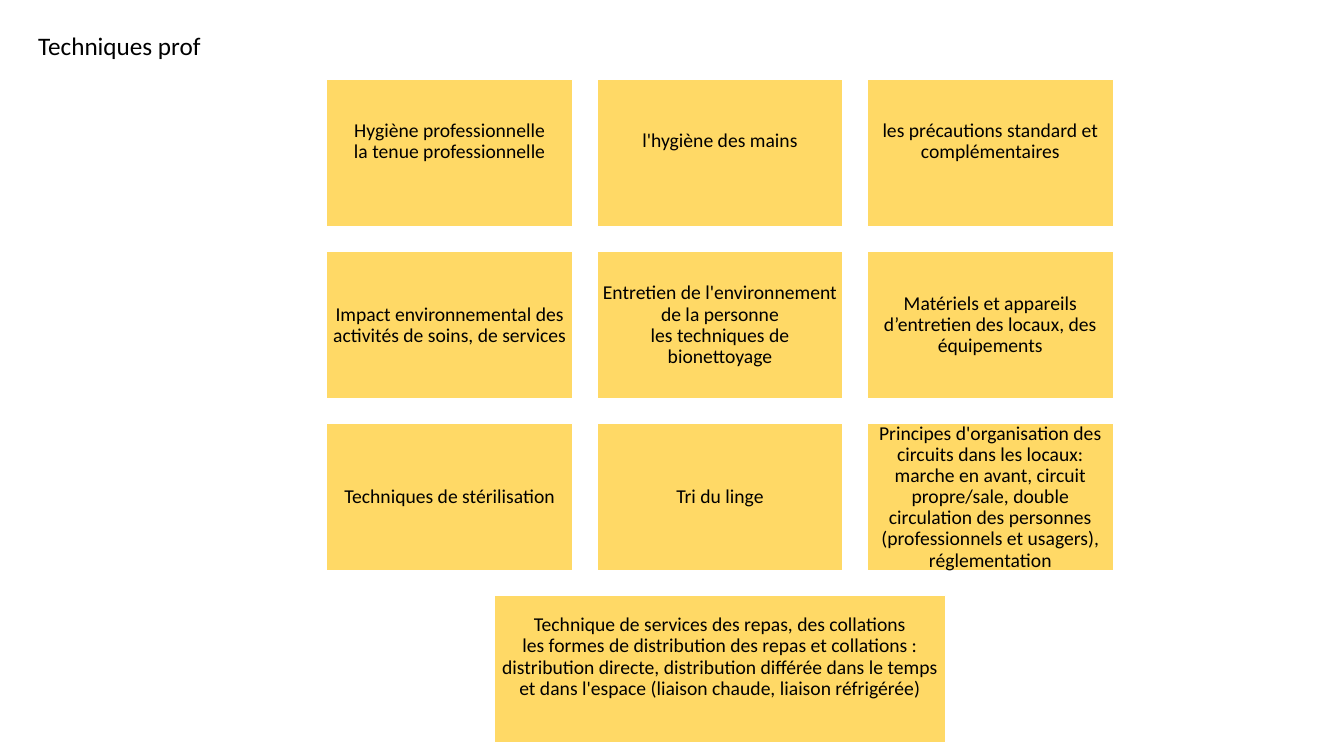
"""Build the slide that lists the professional techniques."""
from pptx import Presentation
from pptx.dml.color import RGBColor
from pptx.enum.shapes import MSO_SHAPE
from pptx.enum.text import MSO_ANCHOR, MSO_AUTO_SIZE, PP_ALIGN
from pptx.util import Pt

TITLE = "Techniques prof"
CARDS = [
    "Hygiène professionnelle\nla tenue professionnelle",
    "l'hygiène des mains",
    "les précautions standard et complémentaires",
    "Impact environnemental des activités de soins, de services",
    "Entretien de l'environnement de la personne\nles techniques de bionettoyage",
    "Matériels et appareils d’entretien des locaux, des équipements",
    "Techniques de stérilisation",
    "Tri du linge",
    "Principes d'organisation des circuits dans les locaux: marche en avant, "
    "circuit propre/sale, double circulation des personnes "
    "(professionnels et usagers), réglementation",
    "Technique de services des repas, des collations\n"
    "les formes de distribution des repas et collations : distribution directe, "
    "distribution différée dans le temps et dans l'espace "
    "(liaison chaude, liaison réfrigérée)",
]
RAISED = {0, 1, 2, 9}

YELLOW = RGBColor(0xFF, 0xD9, 0x66)
WHITE = RGBColor(0xFF, 0xFF, 0xFF)
BLACK = RGBColor(0, 0, 0)
RECT = MSO_SHAPE.RECTANGLE
TOP, MIDDLE = MSO_ANCHOR.TOP, MSO_ANCHOR.MIDDLE
LEFT, CENTER = PP_ALIGN.LEFT, PP_ALIGN.CENTER
FIXED = MSO_AUTO_SIZE.NONE

COLS = 3
X0, Y0 = 233.4, 56.9
WIDTH, HEIGHT, GAP = 175.6, 105.3, 17.5
WIDE = 322.6
INSET, LIFT = 3.6, 17


def write(shape, text, size=14, align=CENTER, anchor=MIDDLE, space=0.9,
          side=INSET, lift=0):
    """Fill a shape with formatted text, one paragraph per line."""
    frame = shape.text_frame
    frame.word_wrap = True
    frame.auto_size = FIXED
    frame.vertical_anchor = anchor
    frame.margin_left = frame.margin_right = Pt(side)
    frame.margin_top = Pt(INSET)
    frame.margin_bottom = Pt(INSET + lift)
    frame.text = text
    for para in frame.paragraphs:
        para.alignment = align
        para.line_spacing = space
        para.space_before = para.space_after = Pt(0)
        for run in para.runs:
            font = run.font
            font.name, font.size = "Calibri", Pt(size)
            font.color.rgb = BLACK


def card(slide, num, text):
    """Draw one card in its grid place; the last row is one centred card."""
    row, col = divmod(num, COLS)
    left = X0 + col * (WIDTH + GAP)
    width = WIDTH
    if num == len(CARDS) - 1:
        width = WIDE
        left = X0 + (COLS * WIDTH + (COLS - 1) * GAP - WIDE) / 2
    top = Y0 + row * (HEIGHT + GAP)
    box = slide.shapes.add_shape(RECT, Pt(left), Pt(top), Pt(width), Pt(HEIGHT))
    box.shadow.inherit = False
    box.fill.solid()
    box.fill.fore_color.rgb = YELLOW
    box.line.color.rgb = WHITE
    box.line.width = Pt(1)
    write(box, text, lift=LIFT if num in RAISED else 0)


def main():
    """Make the deck and save it."""
    deck = Presentation()
    deck.slide_width, deck.slide_height = Pt(960), Pt(540)
    slide = deck.slides.add_slide(deck.slide_layouts[5])
    title = slide.shapes.title
    title.left, title.top = Pt(20), Pt(18)
    title.width, title.height = Pt(232.6), Pt(29)
    write(title, TITLE, size=18, align=LEFT, anchor=TOP, space=1.0, side=7.2)
    for num, text in enumerate(CARDS):
        card(slide, num, text)
    deck.save("out.pptx")


if __name__ == "__main__":
    main()
